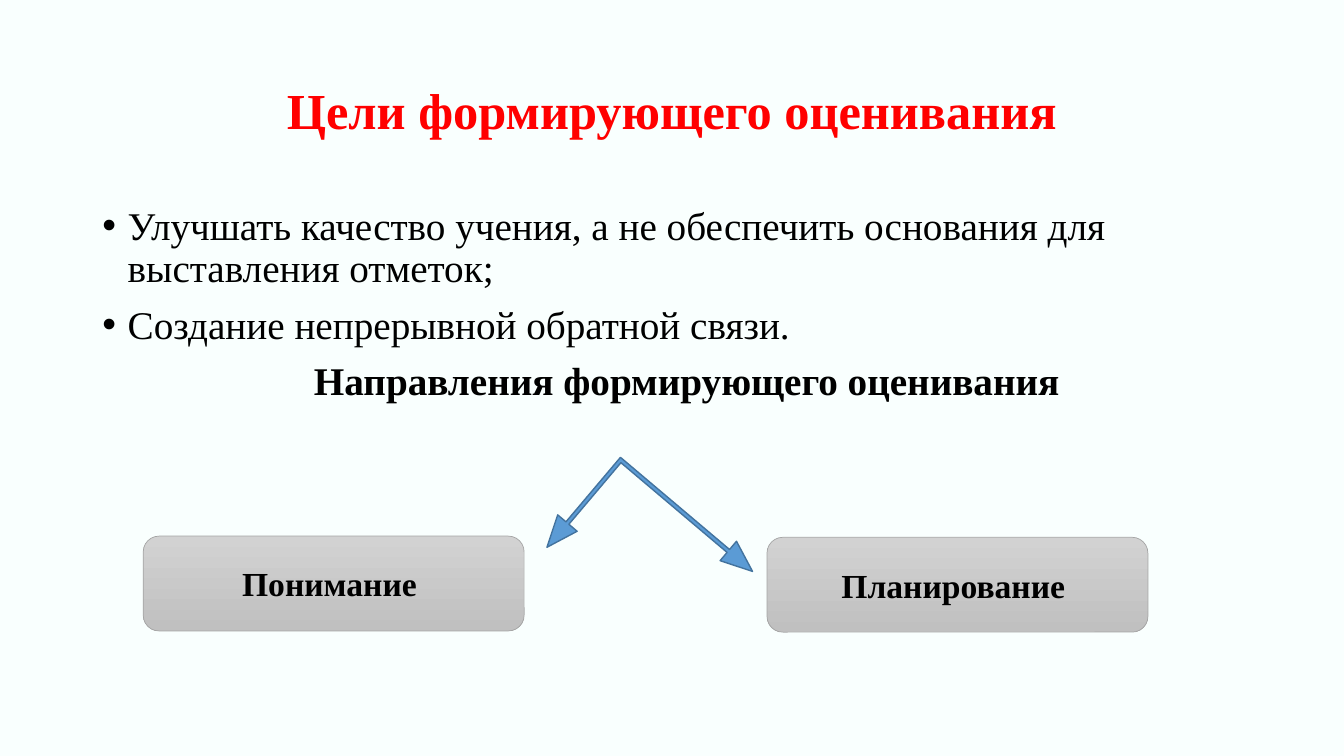
from dataclasses import dataclass

from lxml.etree import SubElement
from pptx import Presentation
from pptx.dml.color import RGBColor
from pptx.enum.shapes import MSO_SHAPE
from pptx.enum.text import MSO_ANCHOR, MSO_AUTO_SIZE, PP_ALIGN
from pptx.oxml.ns import qn
from pptx.slide import Slide
from pptx.text.text import TextFrame
from pptx.util import Cm, Pt

FONT = "Times New Roman"
CONTENT_LEFT, CONTENT_WIDTH = 2.33, 29.21


@dataclass
class Direction:
    label: str
    left: float
    top: float


GOALS = [
    "Улучшать качество учения, а не обеспечить основания для выставления отметок;",
    "Создание непрерывной обратной связи.",
]
DIRECTIONS = [
    Direction("Понимание ", 3.61, 13.51),
    Direction("Планирование ", 19.33, 13.54),
]


def rgb(code: str) -> RGBColor:
    return RGBColor.from_string(code)


def write(frame: TextFrame, text: str, *, size: float, color: str = "000000",
          bold: bool = False, align: PP_ALIGN = PP_ALIGN.LEFT,
          line_spacing: float = 1.0, space_before: float = 0,
          margin: float = 0, bullet: bool = False) -> None:
    """Fill the empty first paragraph of the frame, or add another one."""
    paragraph = frame.add_paragraph() if frame.text else frame.paragraphs[0]
    paragraph.alignment = align
    paragraph.line_spacing = line_spacing
    paragraph.space_before = Pt(space_before)
    run = paragraph.add_run()
    run.text = text
    run.font.name = FONT
    run.font.size = Pt(size)
    run.font.bold = bold
    run.font.color.rgb = rgb(color)

    properties = paragraph._p.get_or_add_pPr()
    properties.set("marL", str(Cm(margin)))
    properties.set("indent", str(Cm(-margin if bullet else 0)))
    if bullet:
        SubElement(properties, qn("a:buFont"), typeface="Arial")
        SubElement(properties, qn("a:buChar"), char="•")


def add_title(slide: Slide) -> None:
    title = slide.shapes.title
    title.left, title.top = Cm(CONTENT_LEFT), Cm(1.02)
    title.width, title.height = Cm(CONTENT_WIDTH), Cm(3.68)
    frame = title.text_frame
    frame.auto_size = MSO_AUTO_SIZE.NONE
    frame.vertical_anchor = MSO_ANCHOR.MIDDLE
    write(frame, "Цели формирующего оценивания", size=36, color="FF0000",
          bold=True, align=PP_ALIGN.CENTER, line_spacing=0.9)


def add_goals(slide: Slide) -> None:
    body = slide.shapes.add_textbox(
        Cm(CONTENT_LEFT), Cm(5.08), Cm(CONTENT_WIDTH), Cm(12.09))
    frame = body.text_frame
    frame.word_wrap = True
    for goal in GOALS:
        write(frame, goal, size=28, line_spacing=0.9, space_before=10,
              margin=0.64, bullet=True)
    write(frame, "Направления формирующего оценивания", size=28, bold=True,
          align=PP_ALIGN.CENTER, line_spacing=0.9, space_before=10, margin=0.74)


def add_direction(slide: Slide, direction: Direction) -> None:
    box = slide.shapes.add_shape(
        MSO_SHAPE.ROUNDED_RECTANGLE, Cm(direction.left), Cm(direction.top),
        Cm(9.6), Cm(2.39))
    box.shadow.inherit = False
    box.fill.gradient()
    box.fill.gradient_angle = 270
    for stop, shade in zip(box.fill.gradient_stops, ("D2D2D2", "C0C0C0")):
        stop.color.rgb = rgb(shade)
    box.line.color.rgb = rgb("A5A5A5")
    box.line.width = Pt(0.5)
    box.text_frame.vertical_anchor = MSO_ANCHOR.MIDDLE
    write(box.text_frame, direction.label, size=24, bold=True,
          align=PP_ALIGN.CENTER)


def add_fork(slide: Slide) -> None:
    """Add the two-headed arrow that leads to both directions."""
    fork = slide.shapes.add_shape(
        MSO_SHAPE.LEFT_UP_ARROW, Cm(14.02), Cm(12.27), Cm(4.67), Cm(3.2))
    fork.shadow.inherit = False
    fork.rotation = 220.2
    for index, ratio in enumerate((0.03, 0.1, 0.25)):
        fork.adjustments[index] = ratio
    fork.fill.solid()
    fork.fill.fore_color.rgb = rgb("5B9BD5")
    fork.line.color.rgb = rgb("43739E")
    fork.line.width = Pt(1)


def main() -> None:
    presentation = Presentation()
    presentation.slide_width, presentation.slide_height = Cm(33.87), Cm(19.05)
    slide = presentation.slides.add_slide(
        presentation.slide_layouts.get_by_name("Title Only"))
    slide.background.fill.solid()
    slide.background.fill.fore_color.rgb = rgb("F9FFFE")

    add_title(slide)
    add_goals(slide)
    for direction in DIRECTIONS:
        add_direction(slide, direction)
    add_fork(slide)
    presentation.save("out.pptx")


if __name__ == "__main__":
    main()
